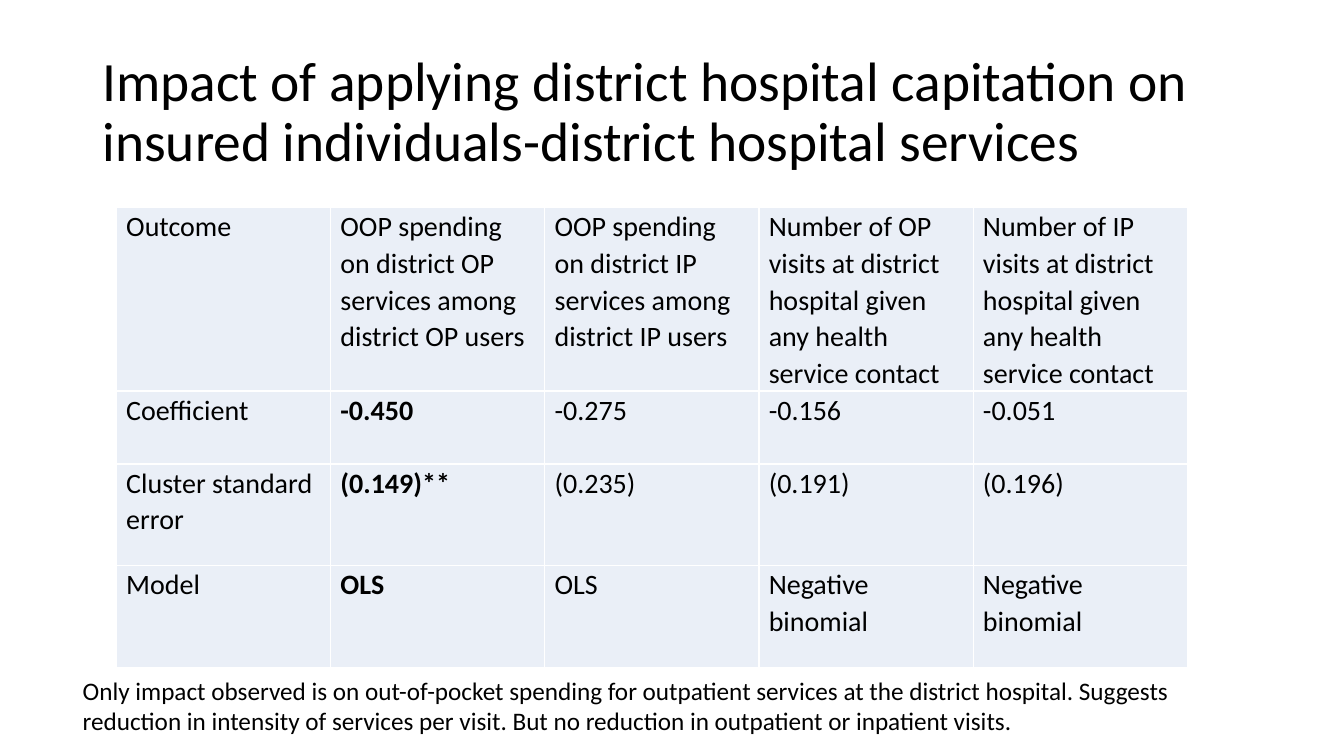
from lxml import etree
from pptx import Presentation
from pptx import util as u
from pptx.dml import color
from pptx.enum import text
from pptx.oxml import ns

Pt = u.Pt
BLACK = color.RGBColor(0x00, 0x00, 0x00)
WHITE = color.RGBColor(0xFF, 0xFF, 0xFF)
PALE = color.RGBColor(0xEA, 0xEF, 0xF7)


def write(frame, words, size, bold=False):
    para = frame.paragraphs[0]
    para.alignment = text.PP_ALIGN.LEFT
    run = para.add_run()
    run.text = words
    run.font.name = "Calibri"
    run.font.size = Pt(size)
    run.font.bold = bold
    run.font.color.rgb = BLACK
    return para


def edge(cell):
    props = cell._tc.get_or_add_tcPr()
    for side in ("lnL", "lnR", "lnT", "lnB"):
        line = etree.SubElement(props, ns.qn("a:" + side), w=str(Pt(1)))
        fill = etree.SubElement(line, ns.qn("a:solidFill"))
        etree.SubElement(fill, ns.qn("a:srgbClr"), val=str(WHITE))


deck = Presentation()
deck.slide_width, deck.slide_height = Pt(960), Pt(540)
slide = deck.slides.add_slide(deck.slide_layouts[5])

title = slide.shapes.title
title.left, title.top, title.width, title.height = Pt(66), Pt(28.75), Pt(828), Pt(104.4)
title.text_frame.auto_size = text.MSO_AUTO_SIZE.NONE
title.text_frame.vertical_anchor = text.MSO_ANCHOR.MIDDLE
head = write(
    title.text_frame,
    "Impact of applying district hospital capitation on "
    "insured individuals-district hospital services",
    39.6,
)
head.line_spacing = 0.9

rows = [
    [
        "Outcome",
        "OOP spending on district OP services among district OP users",
        "OOP spending on district IP services among district IP users",
        "Number of OP visits at district hospital given any health service contact",
        "Number of IP visits at district hospital given any health service contact",
    ],
    ["Coefficient", "-0.450", "-0.275", "-0.156", "-0.051"],
    ["Cluster standard error", "(0.149)**", "(0.235)", "(0.191)", "(0.196)"],
    ["Model", "OLS", "OLS", "Negative binomial", "Negative binomial"],
]
highs = [130.8, 52.2, 72.7, 72.7]
wide = 153

frame = slide.shapes.add_table(
    len(rows), len(rows[0]), Pt(83.2), Pt(148.3), Pt(wide * len(rows[0])), Pt(sum(highs))
)
table = frame.table
table.first_row = False
table.horz_banding = False
for col in table.columns:
    col.width = Pt(wide)
for r, (row, high) in enumerate(zip(rows, highs)):
    table.rows[r].height = Pt(high)
    for c, words in enumerate(row):
        cell = table.cell(r, c)
        cell.margin_left = cell.margin_right = Pt(7)
        cell.margin_top = cell.margin_bottom = Pt(0)
        edge(cell)
        cell.fill.solid()
        cell.fill.fore_color.rgb = PALE
        para = write(cell.text_frame, words, 20, bold=r > 0 and c == 1)
        para.line_spacing = 1.07

note = slide.shapes.add_textbox(Pt(52), Pt(479), Pt(834), Pt(51))
note.text_frame.word_wrap = True
write(
    note.text_frame,
    "Only impact observed is on out-of-pocket spending for outpatient services "
    "at the district hospital. Suggests reduction in intensity of services per visit. "
    "But no reduction in outpatient or inpatient visits.",
    18,
)

deck.save("out.pptx")
